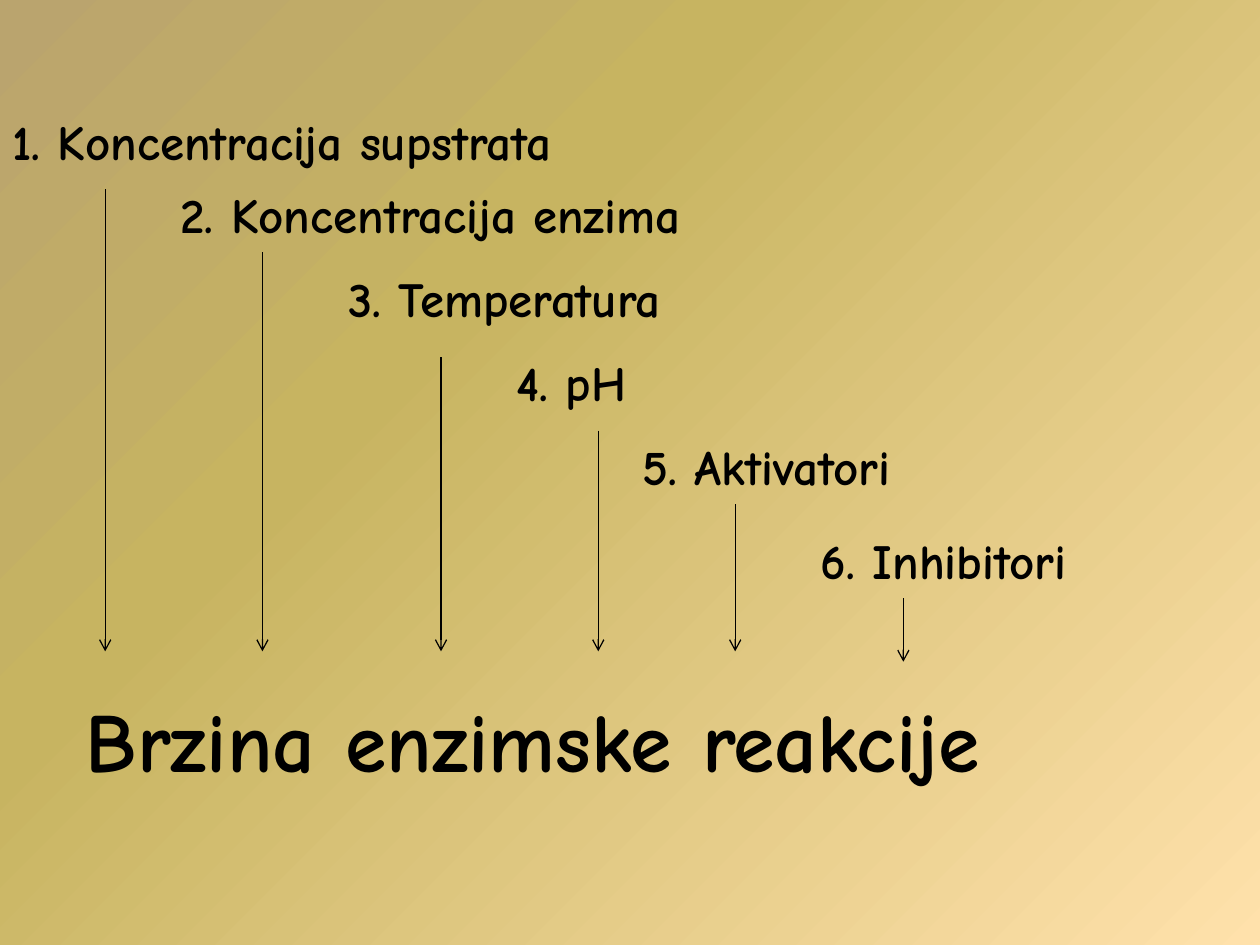
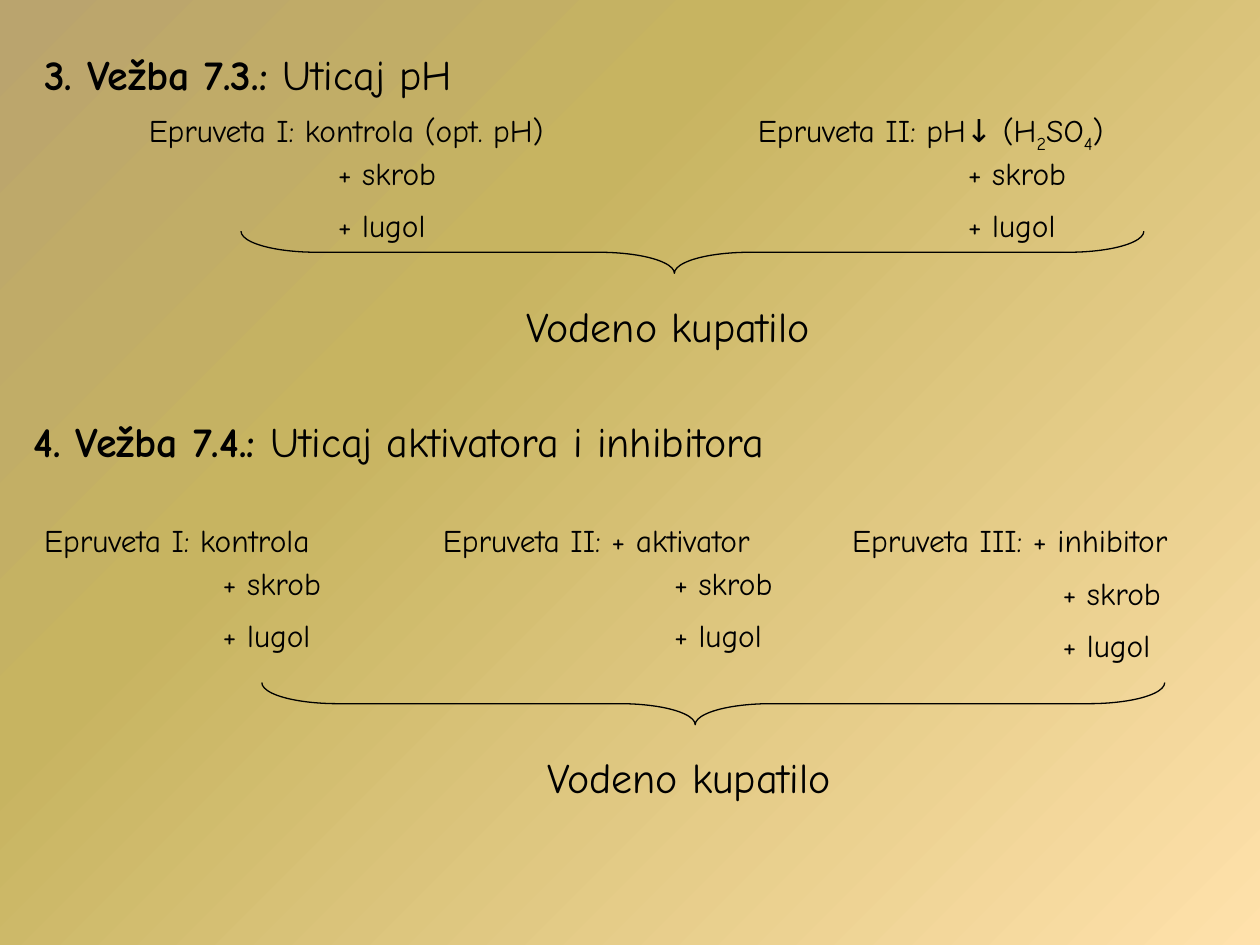
from copy import deepcopy

from pptx import Presentation
from pptx.dml.color import RGBColor
from pptx.enum.shapes import MSO_CONNECTOR, MSO_SHAPE
from pptx.enum.text import MSO_AUTO_SIZE
from pptx.oxml.ns import qn
from pptx.util import Cm, Pt
from lxml import etree

LINE = MSO_CONNECTOR.STRAIGHT
BRACE = MSO_SHAPE.LEFT_BRACE
GROW = MSO_AUTO_SIZE.SHAPE_TO_FIT_TEXT

FONT = "Comic Neue"
INK = "000000"
STOPS = [(0, "FFE1AB"), (65, "C7B461"), (100, "BAA46E")]
HEIGHTS = {48: 2.31, 28: 1.45, 24: 1.27, 18: 1.02}
BOLD, SUB = "bold", "sub"

# text, left, top, width, then x, top and bottom of the arrow
FACTORS = [
    ("1. Koncentracija supstrata", 0, 2.12, 13.51, 2.12, 3.81, 13.13),
    ("2. Koncentracija enzima", 3.39, 3.6, 12.14, 5.29, 5.08, 13.13),
    ("3. Temperatura", 6.77, 5.29, 8.15, 8.89, 7.2, 13.13),
    ("4. pH", 10.16, 6.98, 3.28, 12.06, 8.68, 13.13),
    ("5. Aktivatori", 12.7, 8.68, 6.81, 14.82, 10.16, 13.13),
    ("6. Inhibitori", 16.3, 10.58, 6.53, 18.21, 12.06, 13.34),
]

# runs, left, width, left of the additives, extra drop of the additives
PH_TUBES = [
    ([("Epruveta I: kontrola (opt. pH)", "")], 2.75, 9.35, 6.56, 0),
    ([("Epruveta II: pH↓ (H", ""), ("2", SUB), ("SO", ""), ("4", SUB),
      (")", "")], 15.03, 8.2, 19.26, 0),
]
AGENT_TUBES = [
    ([("Epruveta I: kontrola", "")], 0.64, 6.53, 4.24, 0),
    ([("Epruveta II: + aktivator", "")], 8.68, 7.65, 13.34, 0),
    ([("Epruveta III: + inhibitor", "")], 16.93, 7.82, 21.17, 0.21),
]


def tint(value):
    return RGBColor.from_string(value)


def paint(master):
    """Give the master the gradient that all slides share."""
    fill = master.background.fill
    fill.gradient()
    fill.gradient_angle = 135
    stops = master.element.find(".//" + qn("a:gsLst"))
    stops.append(deepcopy(stops[-1]))
    for stop, (place, value) in zip(fill.gradient_stops, STOPS):
        stop.position = place / 100
        stop.color.rgb = tint(value)
    for stop in stops:
        for shade in list(stop[0]):
            stop[0].remove(shade)


def write(slide, left, top, width, size, runs, bold=False):
    """Add one unwrapped line of text made of (text, style) runs."""
    box = slide.shapes.add_textbox(Cm(left), Cm(top), Cm(width),
                                   Cm(HEIGHTS[size]))
    frame = box.text_frame
    frame.word_wrap = False
    frame.auto_size = GROW
    line = frame.paragraphs[0]
    font = line.font
    font.name, font.size, font.bold = FONT, Pt(size), bold
    font.color.rgb = tint(INK)
    for words, style in runs:
        run = line.add_run()
        run.text = words
        if style == BOLD:
            run.font.bold = True
        elif style == SUB:
            run.font._element.set("baseline", "-25000")


def ink(shape):
    shape.line.color.rgb = tint(INK)
    shape.line.width = Pt(0.75)


def arrow(slide, x, top, end):
    link = slide.shapes.add_connector(LINE, Cm(x), Cm(top), Cm(x), Cm(end))
    ink(link)
    tail = etree.SubElement(link.line._get_or_add_ln(), qn("a:tailEnd"))
    tail.set("type", "arrow")
    etree.SubElement(link._element.spPr, qn("a:effectLst"))


def brace(slide, left, top, width, height):
    """Add a brace that points down and fills the given box."""
    shape = slide.shapes.add_shape(
        BRACE, Cm(left + (width - height) / 2),
        Cm(top - (width - height) / 2), Cm(height), Cm(width))
    shape.rotation = 270
    shape.adjustments[0] = 1.79
    shape.adjustments[1] = 0.48
    shape.shadow.inherit = False
    shape.fill.background()
    ink(shape)


def tube(slide, top, runs, left, width, inset, drop):
    write(slide, left, top, width, 18, runs)
    for row, (words, span) in enumerate([("+ skrob", 2.67),
                                         ("+ lugol", 2.36)]):
        write(slide, inset, top + 0.86 + drop + row * 1.05, span, 18,
              [(words, "")])


def test(slide, left, top, width, head, row, tubes, bath):
    """Add an exercise; row is the top of its tubes, bath the brace's corner."""
    label, topic = head
    write(slide, left, top, width, 24, [(label, BOLD), (topic, "")])
    for item in tubes:
        tube(slide, top + row, *item)
    x, y = bath
    brace(slide, x, top + y, 18.2, 0.85)
    write(slide, x + 5.5, top + y + 1.27, 6.71, 24, [("Vodeno kupatilo", "")])


def speed(slide):
    write(slide, 1.48, 13.76, 21.11, 48, [("Brzina enzimske reakcije", "")],
          True)
    for words, left, top, width, x, start, end in FACTORS:
        write(slide, left, top, width, 28, [(words, "")], True)
        arrow(slide, x, start, end)


def tests(slide):
    test(slide, 0.64, 0.85, 10.87, ("3. Vežba 7.3.: ", "Uticaj pH"),
         1.27, PH_TUBES, (4.86, 3.81))
    test(slide, 0.43, 8.26, 18.39,
         ("4. Vežba 7.4.: ", "Uticaj aktivatora i inhibitora"),
         2.12, AGENT_TUBES, (5.28, 5.5))


def main():
    deck = Presentation()
    deck.slide_width, deck.slide_height = Cm(25.4), Cm(19.05)
    paint(deck.slide_master)
    for build in (speed, tests):
        build(deck.slides.add_slide(deck.slide_layouts[6]))
    deck.save("out.pptx")


if __name__ == "__main__":
    main()
